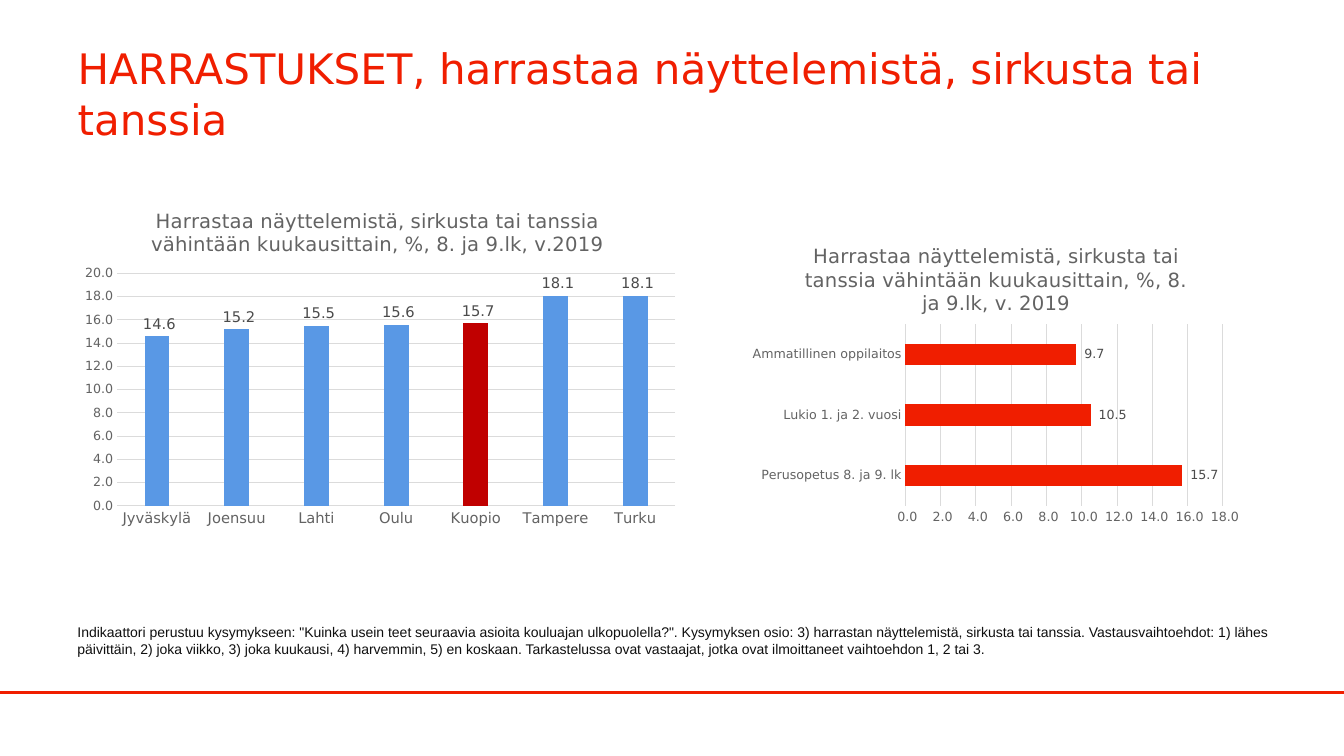
from dataclasses import dataclass, field

from lxml import etree
from pptx import Presentation
from pptx import util as u
from pptx.chart.data import CategoryChartData
from pptx.dml.color import RGBColor
from pptx.enum import chart as charts
from pptx.enum import shapes, text
from pptx.oxml import parse_xml
from pptx.oxml.ns import nsdecls, qn

RED = RGBColor(0xF0, 0x1E, 0x00)
DARK_RED = RGBColor(0xC0, 0x00, 0x00)
BLUE = RGBColor(0x59, 0x98, 0xE5)
INK = RGBColor(0x0F, 0x0F, 0x0F)
GREY = RGBColor(0x63, 0x63, 0x63)
LABEL_GREY = RGBColor(0x4B, 0x4B, 0x4B)
GRID = RGBColor(0xDB, 0xDB, 0xDB)
CHART_FONT = "DejaVu Sans"
NUMBER_FORMAT = r"#\ ##0.0"

TITLE = "HARRASTUKSET, harrastaa näyttelemistä, sirkusta tai tanssia"
NOTE = (
    'Indikaattori perustuu kysymykseen: "Kuinka usein teet seuraavia asioita kouluajan '
    'ulkopuolella?". Kysymyksen osio: 3) harrastan näyttelemistä, sirkusta tai tanssia. '
    "Vastausvaihtoehdot: 1) lähes päivittäin, 2) joka viikko, 3) joka kuukausi, "
    "4) harvemmin, 5) en koskaan. Tarkastelussa ovat vastaajat, jotka ovat ilmoittaneet "
    "vaihtoehdon 1, 2 tai 3."
)


@dataclass
class BarChart:
    kind: charts.XL_CHART_TYPE
    position: tuple[float, float, float, float]
    plot_area: tuple[float, float, float, float]  # shares of the chart's size
    title: str
    values: dict[str, float]
    color: RGBColor
    gap: int
    overlap: int
    axis_max: float
    category_size: float
    label_size: float
    highlights: dict[str, RGBColor] = field(default_factory=dict)


CHARTS = [
    BarChart(
        charts.XL_CHART_TYPE.COLUMN_CLUSTERED,
        (0.67, 1.9, 6.15, 3.39),
        (0.08, 0.24, 0.9, 0.68),
        "Harrastaa näyttelemistä, sirkusta tai tanssia vähintään kuukausittain, %, "
        "8. ja 9.lk, v.2019",
        {"Jyväskylä": 14.6, "Joensuu": 15.2, "Lahti": 15.5, "Oulu": 15.6,
         "Kuopio": 15.7, "Tampere": 18.1, "Turku": 18.1},
        BLUE, gap=219, overlap=-27, axis_max=20, category_size=10.5, label_size=10.5,
        highlights={"Kuopio": DARK_RED},
    ),
    BarChart(
        charts.XL_CHART_TYPE.BAR_CLUSTERED,
        (7.38, 2.26, 5, 3),
        (0.32, 0.32, 0.63, 0.6),
        "Harrastaa näyttelemistä, sirkusta tai tanssia vähintään kuukausittain, %, "
        "8. ja 9.lk, v. 2019",
        {"Perusopetus 8. ja 9. lk": 15.7, "Lukio 1. ja 2. vuosi": 10.5,
         "Ammatillinen oppilaitos": 9.7},
        RED, gap=182, overlap=0, axis_max=18, category_size=9, label_size=9,
    ),
]


def apply_format(target, values: dict) -> None:
    for name, value in values.items():
        setattr(target, name, value)


def style_font(font, size: float, color: RGBColor, name: str = CHART_FONT) -> None:
    apply_format(font, {"size": u.Pt(size), "name": name, "bold": False})
    font.color.rgb = color


def style_line(line, color: RGBColor, width: float) -> None:
    line.color.rgb = color
    line.width = u.Pt(width)


def place_plot_area(chart, shares: tuple[float, float, float, float]) -> None:
    """Fix the inner plot area, given as left, top, width and height shares."""
    plot_area = chart.element.find(".//" + qn("c:plotArea"))
    for old in plot_area.findall(qn("c:layout")):
        plot_area.remove(old)
    layout = parse_xml(f"<c:layout {nsdecls('c')}><c:manualLayout/></c:layout>")
    settings = {"layoutTarget": "inner", "xMode": "edge", "yMode": "edge"}
    settings |= dict(zip("xywh", shares))
    for tag, value in settings.items():
        etree.SubElement(layout[0], qn(f"c:{tag}")).set("val", str(value))
    plot_area.insert(0, layout)


def add_bar_chart(page, spec_: BarChart) -> None:
    data = CategoryChartData(number_format=NUMBER_FORMAT)
    data.categories = list(spec_.values)
    data.add_series("Series 1", list(spec_.values.values()))
    box = [u.Inches(length) for length in spec_.position]
    chart = page.shapes.add_chart(spec_.kind, *box, data).chart
    chart.has_legend = False
    style_font(chart.font, 10, INK)

    chart.has_title = True
    chart.chart_title.include_in_layout = False
    span = chart.chart_title.text_frame.paragraphs[0].add_run()
    span.text = spec_.title
    style_font(span.font, 14, GREY)

    for axis, size in ((chart.category_axis, spec_.category_size), (chart.value_axis, 9)):
        apply_format(axis, {
            "major_tick_mark": charts.XL_TICK_MARK.NONE,
            "minor_tick_mark": charts.XL_TICK_MARK.NONE,
        })
        style_font(axis.tick_labels.font, size, GREY)
    style_line(chart.category_axis.format.line, GRID, 0.75)
    value_axis = chart.value_axis
    apply_format(value_axis, {
        "minimum_scale": 0,
        "maximum_scale": spec_.axis_max,
        "major_unit": 2,
        "has_major_gridlines": True,
    })
    value_axis.format.line.fill.background()
    style_line(value_axis.major_gridlines.format.line, GRID, 0.75)

    plot = chart.plots[0]
    apply_format(plot, {
        "gap_width": spec_.gap,
        "overlap": spec_.overlap,
        "vary_by_categories": False,
        "has_data_labels": True,
    })
    apply_format(plot.data_labels, {
        "show_value": True,
        "position": charts.XL_LABEL_POSITION.OUTSIDE_END,
    })
    style_font(plot.data_labels.font, spec_.label_size, LABEL_GREY)
    for numbers in (value_axis.tick_labels, plot.data_labels):
        apply_format(numbers, {
            "number_format": NUMBER_FORMAT,
            "number_format_is_linked": False,
        })

    series = plot.series[0]
    fills = [(series, spec_.color)]
    for index, category in enumerate(spec_.values):
        if category in spec_.highlights:
            fills.append((series.points[index], spec_.highlights[category]))
    for bar, color in fills:
        bar.format.fill.solid()
        bar.format.fill.fore_color.rgb = color
    place_plot_area(chart, spec_.plot_area)


def write_text(frame, words: str, size: float, color: RGBColor, font: str,
               anchor: text.MSO_ANCHOR) -> None:
    apply_format(frame, {
        "word_wrap": True,
        "auto_size": text.MSO_AUTO_SIZE.NONE,
        "vertical_anchor": anchor,
    })
    para = frame.paragraphs[0]
    para.alignment = text.PP_ALIGN.LEFT
    span = para.add_run()
    span.text = words
    style_font(span.font, size, color, font)


def add_footer_line(page) -> None:
    line = page.shapes.add_connector(
        shapes.MSO_CONNECTOR.STRAIGHT,
        u.Inches(0), u.Inches(6.87), u.Inches(13.33), u.Inches(6.87),
    )
    style_line(line.line, RED, 2)
    etree.SubElement(line.element.spPr, qn("a:effectLst"))


def main() -> None:
    deck = Presentation()
    apply_format(deck, {"slide_width": u.Inches(13.33), "slide_height": u.Inches(7.5)})
    page = deck.slides.add_slide(deck.slide_layouts.get_by_name("Title Only"))
    add_footer_line(page)
    title = page.shapes.title
    apply_format(title, {
        "left": u.Inches(0.67), "top": u.Inches(0.3),
        "width": u.Inches(12), "height": u.Inches(1.25),
    })
    write_text(title.text_frame, TITLE, 30, RED, CHART_FONT, text.MSO_ANCHOR.MIDDLE)
    for bar_chart in CHARTS:
        add_bar_chart(page, bar_chart)
    note = page.shapes.add_textbox(
        u.Inches(0.67), u.Inches(6.14), u.Inches(12.11), u.Inches(0.44))
    write_text(note.text_frame, NOTE, 10, INK, "Arial", text.MSO_ANCHOR.TOP)
    deck.save("out.pptx")


if __name__ == "__main__":
    main()
